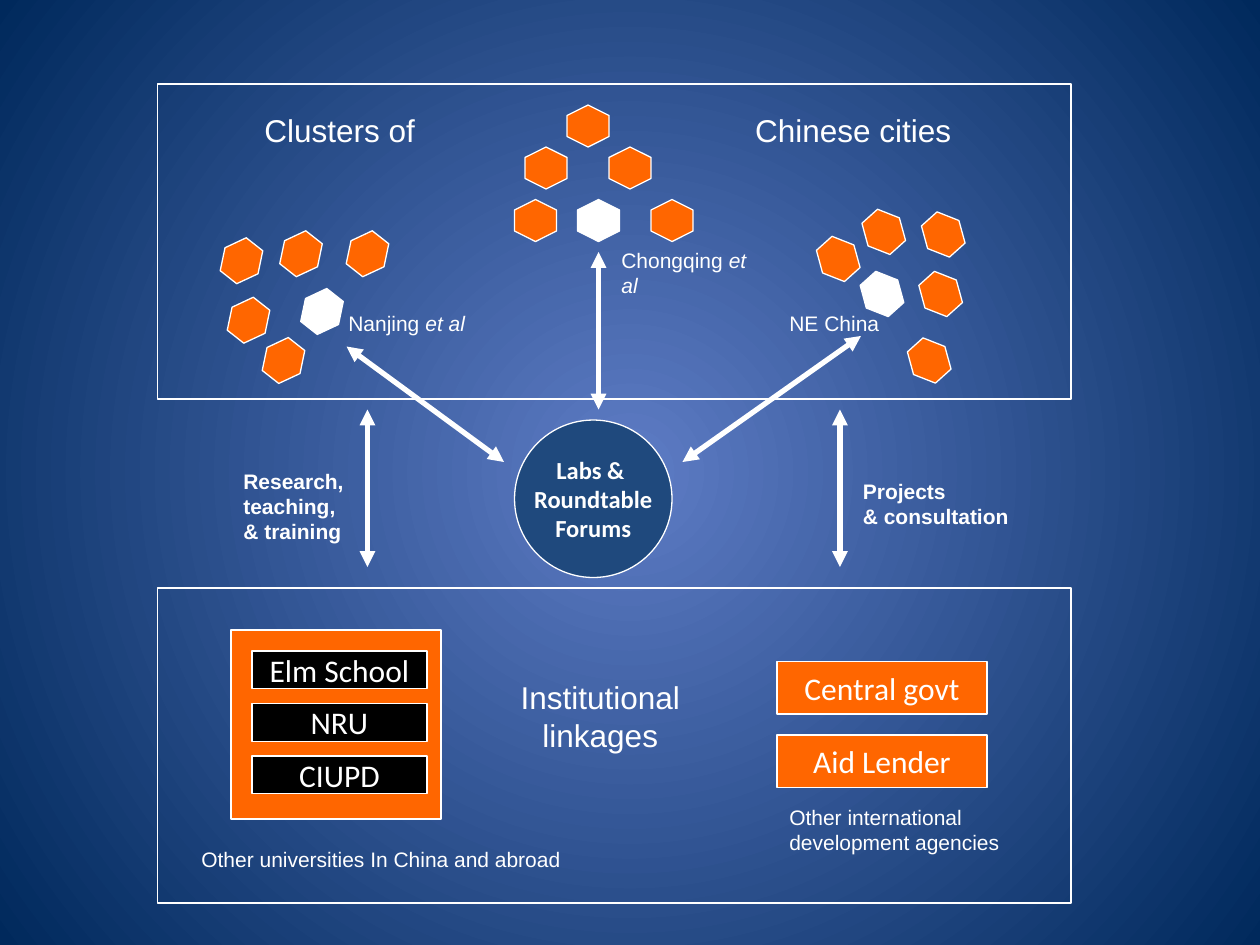
from lxml import etree
from pptx import Presentation
from pptx.dml.color import RGBColor
from pptx.enum.shapes import MSO_CONNECTOR, MSO_SHAPE
from pptx.enum.text import MSO_ANCHOR, PP_ALIGN
from pptx.oxml.ns import qn
from pptx.util import Pt

RECTANGLE, HEXAGON, OVAL = MSO_SHAPE.RECTANGLE, MSO_SHAPE.HEXAGON, MSO_SHAPE.OVAL
STRAIGHT = MSO_CONNECTOR.STRAIGHT
LEFT, CENTER = PP_ALIGN.LEFT, PP_ALIGN.CENTER
TOP, MIDDLE = MSO_ANCHOR.TOP, MSO_ANCHOR.MIDDLE
COLORS = {"white": "FFFFFF", "orange": "FF6600", "black": "000000",
          "hub": "1F497D", "glow": "5E7CC5", "edge": "00295C"}
COLORS = {name: RGBColor.from_string(value) for name, value in COLORS.items()}

presentation = Presentation()
presentation.slide_width, presentation.slide_height = Pt(720), Pt(540)
slide = presentation.slides.add_slide(presentation.slide_layouts[6])


def add_shape(kind, left, top, width, height, fill=None, rotation=0):
    shape = slide.shapes.add_shape(kind, Pt(left), Pt(top), Pt(width), Pt(height))
    shape.shadow.inherit = False
    shape.rotation = rotation
    if fill:
        shape.fill.solid()
        shape.fill.fore_color.rgb = COLORS[fill]
    else:
        shape.fill.background()
    shape.line.color.rgb = COLORS["white"]
    shape.line.width = Pt(0.75)
    return shape


def write(shape, text, size=12, font="Arial", bold=False, align=LEFT,
          anchor=TOP, wrap=False):
    """Write text into a shape: lines split by newlines, italics between asterisks."""
    frame = shape.text_frame
    frame.word_wrap = wrap
    frame.vertical_anchor = anchor
    for index, line in enumerate(text.split("\n")):
        paragraph = frame.add_paragraph() if index else frame.paragraphs[0]
        paragraph.alignment = align
        for part, words in enumerate(line.split("*")):
            if words:
                run = paragraph.add_run()
                run.text = words
                run.font.name, run.font.size = font, Pt(size)
                run.font.bold, run.font.italic = bold, part % 2 == 1
                run.font.color.rgb = COLORS["white"]


# Background: glow spreading from the centre
background = slide.background.fill
background.gradient()
for stop, name, position in zip(background.gradient_stops, ("glow", "edge"), (0, 1)):
    stop.color.rgb = COLORS[name]
    stop.position = position
gradient = slide.element.find(".//" + qn("a:gradFill"))
gradient.remove(gradient.find(qn("a:lin")))
circle = etree.SubElement(gradient, qn("a:path"), {"path": "circle"})
etree.SubElement(circle, qn("a:fillToRect"), dict.fromkeys("ltrb", "50000"))

# Frames for the cities and the institutions
for top in (48, 336):
    add_shape(RECTANGLE, 90, top, 522, 180)

# City clusters: rotation, white core city, surrounding cities
clusters = [
    (38.3, (172, 166), [(160, 133), (150, 194), (198, 133), (130, 171), (126, 137)]),
    (138.1, (492, 156), [(525.5, 156), (467, 136), (519, 194), (493, 120.5), (527, 122)]),
    (90, (330, 114), [(348, 84), (294, 114), (372, 114), (300, 84), (324, 60)]),
]
for rotation, core, cities in clusters:
    for left, top in cities:
        add_shape(HEXAGON, left, top, 24, 24, "orange", rotation)
    add_shape(HEXAGON, *core, 24, 24, "white", rotation)

# Central hub
hub = add_shape(OVAL, 294, 240, 90, 90, "hub")
write(hub, "Labs & \nRoundtable\nForums", size=14, font="Calibri", bold=True,
      align=CENTER, anchor=MIDDLE)

# Universities and agencies
add_shape(RECTANGLE, 132, 360, 120, 108, "orange")
groups = [
    (("Elm School", "NRU", "CIUPD"), 144, 372, 30, 100, 21.6, "black"),
    (("Central govt", "Aid Lender"), 444, 378, 42, 120, 30, "orange"),
]
for names, left, top, step, width, height, fill in groups:
    for index, name in enumerate(names):
        box = add_shape(RECTANGLE, left, top + index * step, width, height, fill)
        write(box, name, size=18, font="Calibri", align=CENTER, anchor=MIDDLE)

# Headings and labels
labels = [
    ("Clusters of", 144, 60, 102, 29, {"size": 18}),
    ("Chinese cities", 424.5, 60, 127, 29, {"size": 18}),
    ("Institutional \nlinkages", 288, 384, 110, 50, {"size": 18, "align": CENTER}),
    ("Nanjing *et al*", 192, 174, 81, 21.6, {}),
    ("Chongqing *et al*", 348, 138, 94, 36, {"wrap": True}),
    ("NE China", 444, 174, 65.5, 21.6, {}),
    ("Research, teaching,\n& training", 132, 264, 72, 50, {"bold": True, "wrap": True}),
    ("Projects\n& consultation", 486, 270, 98, 36, {"bold": True}),
    ("Other universities In China and abroad", 108, 480, 234, 21.6, {"wrap": True}),
    ("Other international development agencies", 444, 456, 144, 36, {"wrap": True}),
]
for text, left, top, width, height, options in labels:
    box = slide.shapes.add_textbox(Pt(left), Pt(top), Pt(width), Pt(height))
    write(box, text, **options)

# Two-way arrows
arrows = [
    (342, 234, 342, 144),
    (390, 264, 492, 192),
    (198, 198, 288, 264),
    (210, 324, 210, 234),
    (480, 324, 480, 234),
]
for ends in arrows:
    arrow = slide.shapes.add_connector(STRAIGHT, *map(Pt, ends))
    arrow.line.color.rgb = COLORS["white"]
    arrow.line.width = Pt(3)
    line = arrow.element.spPr.find(qn("a:ln"))
    for end in ("a:headEnd", "a:tailEnd"):
        etree.SubElement(line, qn(end), {"type": "triangle"})
    etree.SubElement(arrow.element.spPr, qn("a:effectLst"))

presentation.save("out.pptx")
